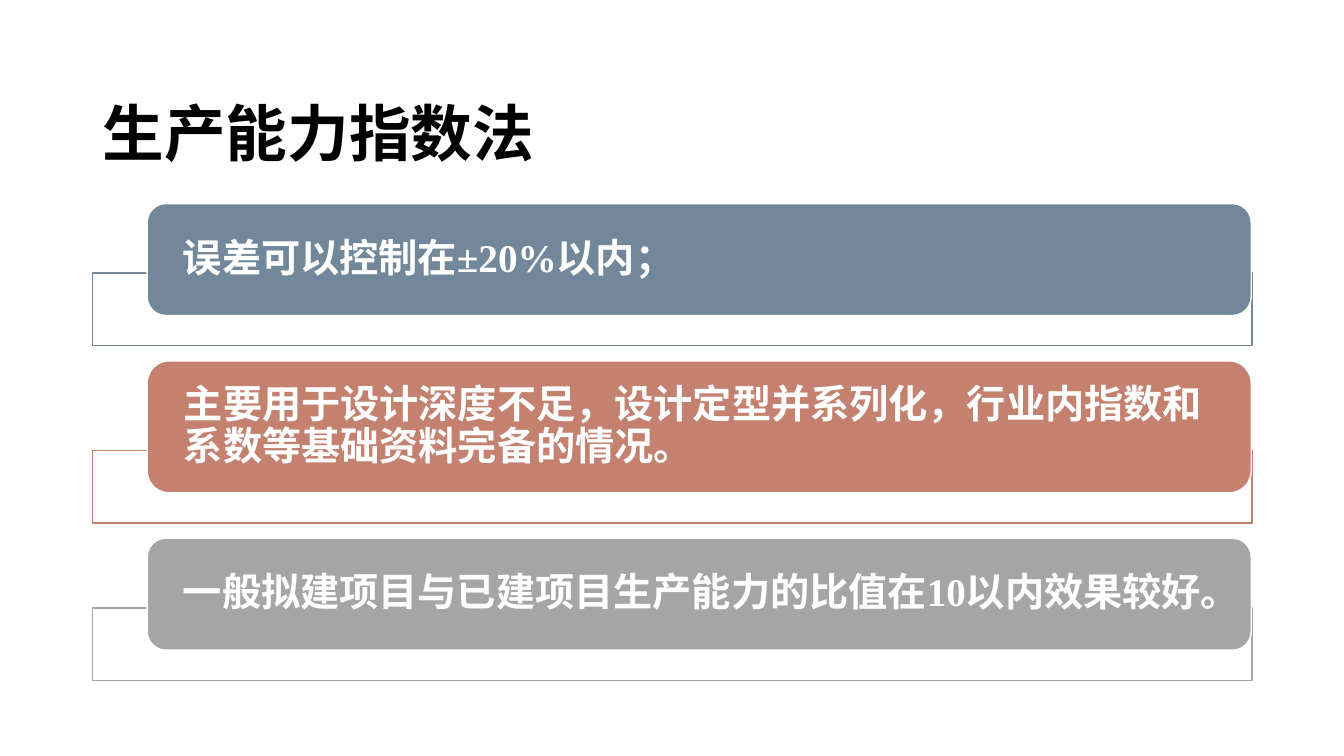
"""Build a slide with a title and three stacked cards on outlined frames."""
from pptx import Presentation
from pptx.dml.color import RGBColor
from pptx.enum.lang import MSO_LANGUAGE_ID as Lang
from pptx.enum.shapes import MSO_SHAPE as Kind
from pptx.enum.text import MSO_ANCHOR as Anchor, PP_ALIGN as Align
from pptx.util import Inches, Pt

BLACK = RGBColor(0x00, 0x00, 0x00)
WHITE = RGBColor(0xFF, 0xFF, 0xFF)
SLATE = RGBColor(0x72, 0x87, 0x99)
CORAL = RGBColor(0xC4, 0x81, 0x70)
GRAY = RGBColor(0xA5, 0xA5, 0xA5)

WIDE, HIGH = 13.33, 7.5
LEFT, SPAN = 0.92, 11.5
CARD_X, CARD_W = 1.46, 10.95
FIRST, GAP = 2.02, 0.15
FRAME_H, LAP = 0.72, 0.42

CARDS = [
    ("误差可以控制在±20%以内；", SLATE, 1.11),
    ("主要用于设计深度不足，设计定型并系列化，行业内指数和系数等基础资料完备的情况。", CORAL, 1.31),
    ("一般拟建项目与已建项目生产能力的比值在10以内效果较好。", GRAY, 1.11),
]


def write(frame, text, size, color, align, space, side=0.1):
    """Fill a text frame with one bold run."""
    frame.word_wrap = True
    frame.vertical_anchor = Anchor.MIDDLE
    frame.margin_left = frame.margin_right = Inches(side)
    frame.margin_top = frame.margin_bottom = 0
    para = frame.paragraphs[0]
    para.alignment = align
    para.line_spacing = space
    run = para.add_run()
    run.text = text
    font = run.font
    font.name = "Times New Roman"
    font.size = Pt(size)
    font.bold = True
    font.color.rgb = color
    font.language_id = Lang.SIMPLIFIED_CHINESE


def block(slide, kind, box, fill, line):
    """Add a filled and outlined shape."""
    shape = slide.shapes.add_shape(kind, *map(Inches, box))
    shape.shadow.inherit = False
    shape.fill.solid()
    shape.fill.fore_color.rgb = fill
    shape.line.color.rgb = line
    shape.line.width = Pt(1)
    return shape


def title(slide, text):
    """Add the slide title."""
    box = slide.shapes.add_textbox(*map(Inches, (LEFT, 0.4, SPAN, 1.45)))
    write(box.text_frame, text, 44, BLACK, Align.JUSTIFY, 1.5)


def card(slide, top, text, color, tall):
    """Add a card over its frame and return the frame's bottom."""
    edge = top + tall - LAP
    block(slide, Kind.RECTANGLE, (LEFT, edge, SPAN, FRAME_H), WHITE, color)
    face = block(slide, Kind.ROUNDED_RECTANGLE, (CARD_X, top, CARD_W, tall), color, WHITE)
    write(face.text_frame, text, 28, WHITE, Align.LEFT, 0.9, 0.3)
    return edge + FRAME_H


def main():
    """Build and save the deck."""
    deck = Presentation()
    deck.slide_width, deck.slide_height = Inches(WIDE), Inches(HIGH)
    slide = deck.slides.add_slide(deck.slide_layouts[6])
    title(slide, "生产能力指数法")
    top = FIRST
    for text, color, tall in CARDS:
        top = card(slide, top, text, color, tall) + GAP
    deck.save("out.pptx")


if __name__ == "__main__":
    main()
